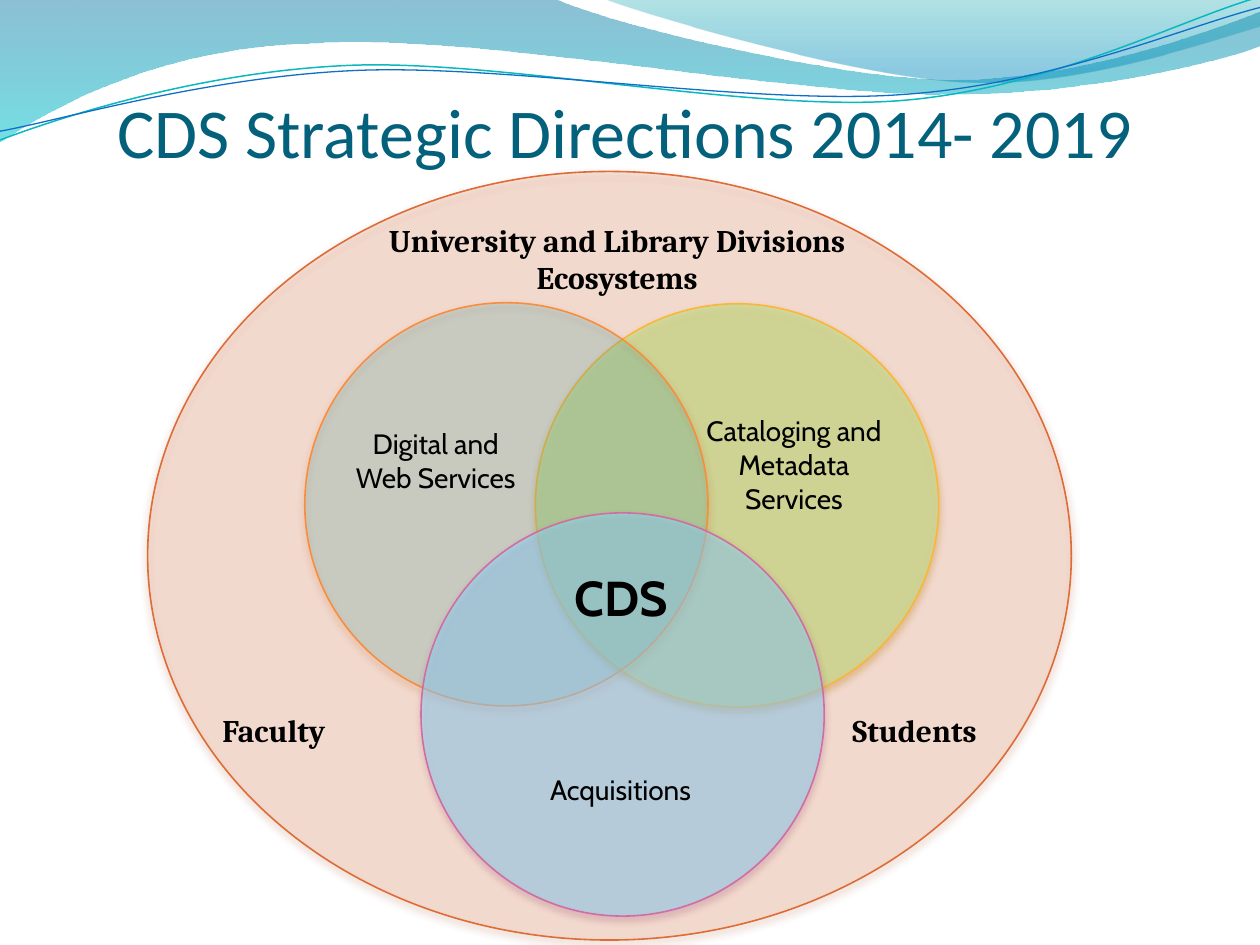
from pptx import Presentation
from pptx.dml.color import RGBColor
from pptx.enum.shapes import MSO_SHAPE as Shape
from pptx.enum.text import MSO_ANCHOR as Anchor, MSO_AUTO_SIZE as AutoSize, PP_ALIGN as Align
from pptx.oxml import parse_xml
from pptx.oxml.ns import nsdecls, qn
from pptx.util import Pt

BLACK = RGBColor(0x00, 0x00, 0x00)
TITLE_TEAL = RGBColor(0x04, 0x61, 0x7B)
WAVE_BLUE, WAVE_CYAN = RGBColor(0x00, 0x74, 0xA1), RGBColor(0x00, 0xC6, 0xCF)
CREST_TEAL, CREST_BLUE = RGBColor(0x00, 0xA1, 0xA9), RGBColor(0x00, 0x8B, 0xBF)
LINE_TEAL, LINE_BLUE = RGBColor(0x0A, 0xB8, 0xBF), RGBColor(0x0F, 0x6F, 0xC6)
PEACH, RUST, RUST_SHADE = RGBColor(0xEB, 0xA7, 0x86), RGBColor(0xDE, 0x6C, 0x36), RGBColor(0x9C, 0x37, 0x07)
LIME, GOLD, GOLD_SHADE = RGBColor(0xC9, 0xDA, 0x92), RGBColor(0xF9, 0xB6, 0x39), RGBColor(0xB0, 0x74, 0x05)
AQUA, ORANGE, ORANGE_SHADE = RGBColor(0x21, 0xB2, 0xC9), RGBColor(0xFA, 0x8D, 0x3D), RGBColor(0xB0, 0x4F, 0x08)
SKY, PINK, PINK_SHADE = RGBColor(0x8A, 0xDF, 0xFF), RGBColor(0xCF, 0x6D, 0xA4), RGBColor(0x89, 0x32, 0x63)

WAVE = [(0, 0), (317, -0.7), (342.7, 12.2, 478, 45.4, 546, 45.4), (614, 45.4, 690, 18.7, 720, 6.5),
        (720.7, 26), (708, 31.7, 626.4, 54.7, 537, 54), (447.8, 54, 275, 20.2, 185, 24.5),
        (93, 26, 33, 59.8, -0.7, 81.4)]
CREST = [(345, -0.7), (366.5, 8, 491, 44.6, 553.7, 46.8), (616.3, 49.7, 692, 23, 720, 15), (720, 0)]
TEAL_CURVE = [(0, 80), (34.6, 67, 113.8, 41, 199.4, 37.4), (284.4, 33.8, 427, 64, 513.4, 57.6),
              (599.8, 51, 675.4, 10.8, 718.6, -1.4)]
BLUE_CURVE = [(0, 75), (33.8, 69, 118, 43.9, 203.8, 40.3), (290.2, 36.7, 430, 60.5, 516.2, 54),
              (602, 48.2, 677.5, 15, 720, 4.3)]


def bend(outline, steps):
    segments = iter(list(outline.element.iter(qn("a:lnTo"))))
    for step in steps[1:]:
        segment = next(segments)
        if len(step) == 2:
            continue
        curve = parse_xml(f'<a:cubicBezTo {nsdecls("a")}/>')
        segment.addprevious(curve)
        for part in (segment, next(segments), next(segments)):
            curve.append(part[0])
            part.getparent().remove(part)


def set_opacity(fill_element, values):
    for color, value in zip(fill_element.iter(qn("a:srgbClr")), values):
        color.append(parse_xml(f'<a:alpha {nsdecls("a")} val="{value * 1000}"/>'))


def add_outline(page, steps, closed):
    points = [(Pt(step[i]), Pt(step[i + 1])) for step in steps for i in range(0, len(step), 2)]
    builder = page.shapes.build_freeform(*points[0])
    builder.add_line_segments(points[1:], close=closed)
    outline = builder.convert_to_shape()
    bend(outline, steps)
    outline.shadow.inherit = False
    return outline


def add_gradient_wave(page, steps, stops):
    wave = add_outline(page, steps, True)
    wave.line.fill.background()
    wave.fill.gradient()
    wave.fill.gradient_angle = 270
    for stop, (position, color, _) in zip(wave.fill.gradient_stops, stops):
        stop.position = position
        stop.color.rgb = color
    set_opacity(wave.element.spPr.find(qn("a:gradFill")), [stop[2] for stop in stops])


def add_curve(page, steps, color, width):
    curve = add_outline(page, steps, False)
    curve.fill.background()
    curve.line.color.rgb = color
    curve.line.width = Pt(width)


def add_header(page):
    add_gradient_wave(page, WAVE, [(0, WAVE_BLUE, 45), (1, WAVE_CYAN, 55)])
    add_gradient_wave(page, CREST, [(0, CREST_TEAL, 30), (0.8, CREST_BLUE, 45)])
    add_curve(page, TEAL_CURVE, LINE_TEAL, 0.85)
    add_curve(page, BLUE_CURVE, LINE_BLUE, 0.75)


def write(frame, text, size, font, color, bold=False, align=Align.CENTER):
    para = frame.paragraphs[0]
    para.alignment = align
    for number, line in enumerate(text.split("\n")):
        if number:
            para.add_line_break()
        span = para.add_run()
        span.text = line
        span.font.size = Pt(size)
        span.font.name = font
        span.font.bold = bold
        span.font.color.rgb = color


def place_title(page, left, top, width, height):
    title = page.shapes.title
    title.left, title.top, title.width, title.height = map(Pt, (left, top, width, height))
    frame = title.text_frame
    frame.auto_size = AutoSize.NONE
    frame.vertical_anchor = Anchor.BOTTOM
    frame.margin_left = frame.margin_right = frame.margin_bottom = 0
    frame.margin_top = Pt(3.6)
    write(frame, "CDS Strategic Directions 2014- 2019", 40, "Calibri", TITLE_TEAL)
    title.element.getparent().append(title.element)


def add_ellipse(page, left, top, width, height, color, opacity, edge, shade):
    ellipse = page.shapes.add_shape(Shape.OVAL, *map(Pt, (left, top, width, height)))
    ellipse.fill.solid()
    ellipse.fill.fore_color.rgb = color
    ellipse.line.color.rgb = edge
    ellipse.line.width = Pt(0.9)
    ellipse.shadow.inherit = False
    properties = ellipse.element.spPr
    set_opacity(properties.find(qn("a:solidFill")), [opacity])
    properties.find(qn("a:effectLst")).append(parse_xml(
        f'<a:outerShdw {nsdecls("a")} blurRad="{Pt(4)}" dist="{Pt(2)}" dir="5400000" rotWithShape="0">'
        f'<a:srgbClr val="{shade}"><a:alpha val="38000"/></a:srgbClr></a:outerShdw>'))


def add_label(page, left, top, width, height, text, size, font, bold=False, align=Align.CENTER):
    box = page.shapes.add_textbox(*map(Pt, (left, top, width, height)))
    box.text_frame.word_wrap = True
    write(box.text_frame, text, size, font, BLACK, bold, align)


def add_venn(page, left, top, width, height):
    add_ellipse(page, left, top, width, height, PEACH, 25, RUST, RUST_SHADE)
    diameter = 230.4
    circles = [
        (221.6, 75.6, LIME, 74, GOLD, GOLD_SHADE),
        (89.8, 75, AQUA, 18, ORANGE, ORANGE_SHADE),
        (156.2, 195.1, SKY, 48, PINK, PINK_SHADE),
    ]
    for x, y, *style in circles:
        add_ellipse(page, left + x, top + y, diameter, diameter, *style)
    labels = [
        (65.6, 24.5, 405.4, 51, "University and Library Divisions\nEcosystems", 18, "Cambria", True),
        (35.6, 305, 84, 29, "Faculty", 18, "Cambria", True, Align.LEFT),
        (395.6, 305, 90, 29, "Students", 18, "Cambria", True, Align.LEFT),
        (107.6, 142.2, 114, 46, "Digital and Web Services", 16, "Cabin"),
        (307, 135, 124.6, 65.5, "Cataloging and Metadata Services", 16, "Cabin"),
        (204.7, 339.9, 131, 26.6, "Acquisitions", 16, "Cabin"),
        (233.8, 222.5, 73.4, 41, "CDS", 28, "Cabin", True),
    ]
    for x, y, *details in labels:
        add_label(page, left + x, top + y, *details)


def main():
    deck = Presentation()
    deck.slide_width, deck.slide_height = Pt(720), Pt(540)
    page = deck.slides.add_slide(deck.slide_layouts[5])
    add_header(page)
    place_title(page, 33, 8.6, 648, 90)
    add_venn(page, 84.4, 98, 527.8, 439.2)
    deck.save("out.pptx")


if __name__ == "__main__":
    main()
